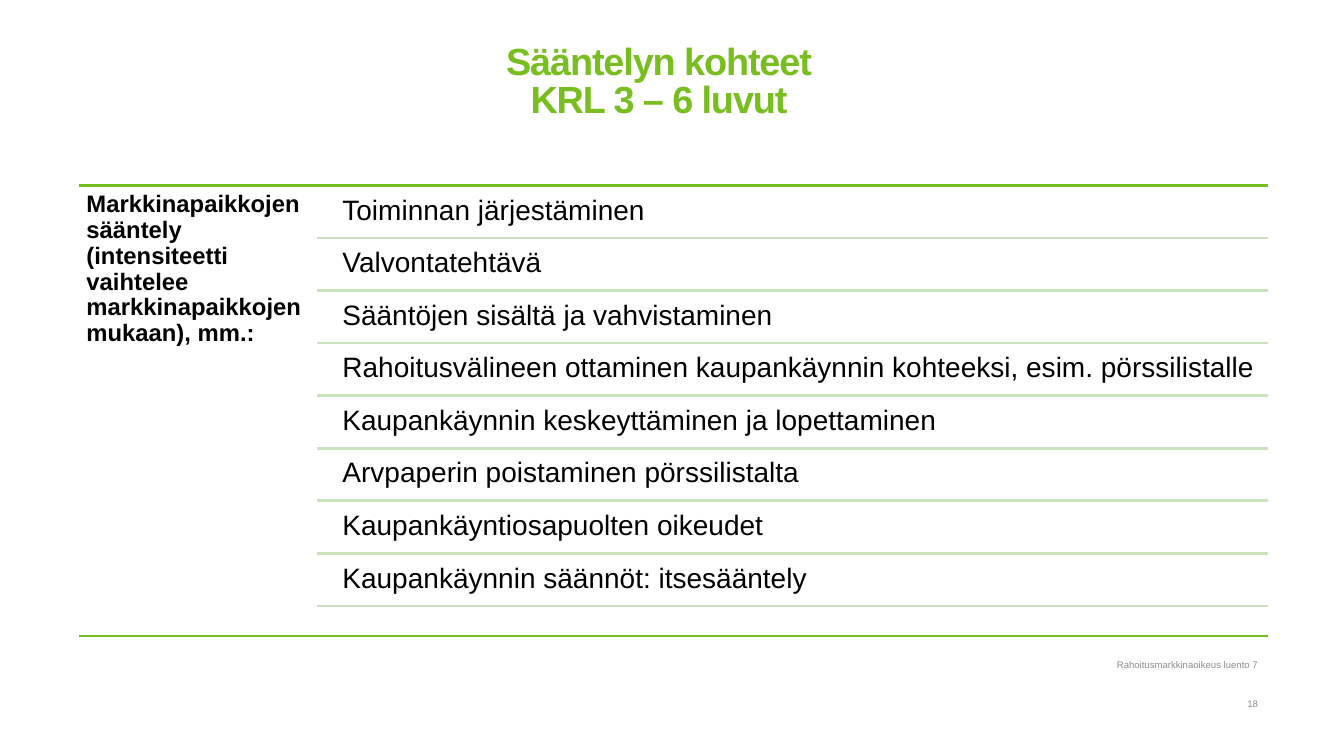
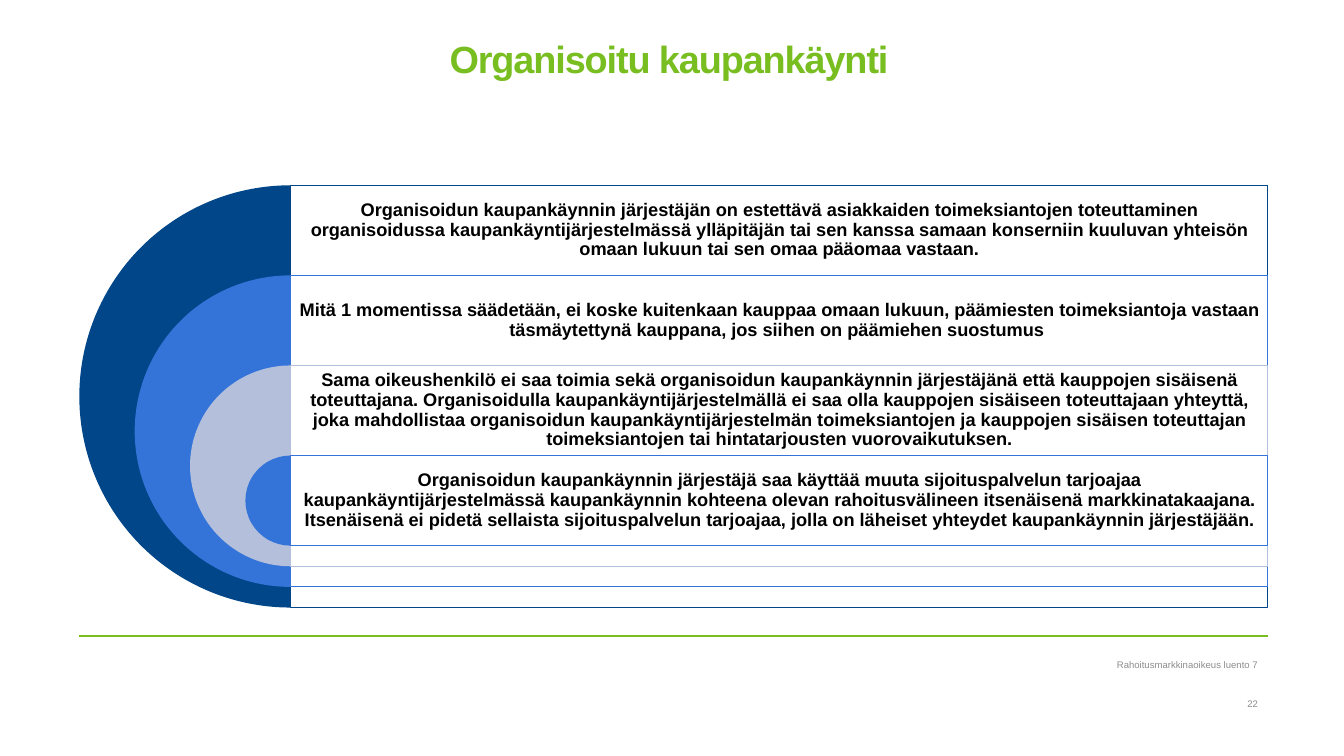
from lxml.etree import SubElement
from pptx import Presentation
from pptx.dml.color import RGBColor
from pptx.enum.shapes import MSO_CONNECTOR, MSO_SHAPE
from pptx.enum.text import MSO_ANCHOR, PP_ALIGN
from pptx.oxml.ns import qn
from pptx.util import Cm, Pt

GREEN, PALE_GREEN = "78BE20", "CAE2BD"
NAVY, BLUE, LAVENDER = "004688", "3474D9", "B4BFDC"
BLACK, GREY, WHITE = "000000", "8C8C8C", "FFFFFF"

LEFT, RIGHT = 2.0, 31.95
BODY_TOP, BODY_HEIGHT = 4.67, 10.64


def color(hex_string):
    return RGBColor.from_string(hex_string)


def set_all(target, values):
    for name, value in values.items():
        setattr(target, name, value)


class Deck:
    """Holds the shared style and the slide being built."""

    FONT = "Arial"
    FOOTER = "Rahoitusmarkkinaoikeus luento 7"

    def __init__(self):
        self.presentation = Presentation()
        set_all(self.presentation, {"slide_width": Cm(33.87), "slide_height": Cm(19.05)})
        self.slide = None

    def start_slide(self, title, number, title_left, title_top):
        self.slide = self.presentation.slides.add_slide(self.presentation.slide_layouts[6])
        self.rule(LEFT, 16.03, GREEN, 1)
        self.text(title, (title_left, title_top, RIGHT - LEFT, 3.33), 27, GREEN, bold=True,
                  align=PP_ALIGN.CENTER, spacing=0.85, tracking=-80)
        for wording, top in ((self.FOOTER, 16.53), (str(number), 17.5)):
            self.text(wording, (18.29, top, 13.41, 0.45), 6.8, GREY, insets=(0.25, 0.13, 0, 0.13),
                      align=PP_ALIGN.RIGHT, anchor=MSO_ANCHOR.MIDDLE)

    def rule(self, left, top, line_color, width):
        """Draw a horizontal line that ends at the right margin."""
        rule = self.slide.shapes.add_connector(
            MSO_CONNECTOR.STRAIGHT, Cm(left), Cm(top), Cm(RIGHT), Cm(top))
        rule.line.color.rgb = color(line_color)
        rule.line.width = Pt(width)
        SubElement(rule._element.spPr, qn("a:effectLst"))

    def text(self, wording, box, size, font_color, bold=False, insets=(0, 0, 0, 0),
             align=PP_ALIGN.LEFT, anchor=MSO_ANCHOR.TOP, spacing=1.0, tracking=None):
        frame = self.slide.shapes.add_textbox(*map(Cm, box)).text_frame
        sides = ("margin_left", "margin_top", "margin_right", "margin_bottom")
        set_all(frame, {"word_wrap": True, "vertical_anchor": anchor,
                        **dict(zip(sides, map(Cm, insets)))})
        paragraph = frame.paragraphs[0]
        paragraph.text = wording
        set_all(paragraph, {"alignment": align, "line_spacing": spacing})
        for run in paragraph.runs:
            set_all(run.font, {"name": self.FONT, "size": Pt(size), "bold": bold})
            run.font.color.rgb = color(font_color)
            if tracking is not None:
                run._r.get_or_add_rPr().set("spc", str(tracking))

    def shape(self, preset, box, fill):
        shape = self.slide.shapes.add_shape(preset, *map(Cm, box))
        shape.shadow.inherit = False
        shape.fill.solid()
        shape.fill.fore_color.rgb = color(fill)
        shape.line.fill.background()
        return shape

    def half_disc(self, box, fill):
        disc = self.shape(MSO_SHAPE.PIE, box, fill)
        disc.adjustments[0], disc.adjustments[1] = 54, 162

    def panel(self, box, outline):
        """Draw a slightly transparent white rectangle with a thin outline."""
        panel = self.shape(MSO_SHAPE.RECTANGLE, box, WHITE)
        panel.line.color.rgb = color(outline)
        panel.line.width = Pt(0.75)
        white = panel._element.spPr.find(qn("a:solidFill")).find(qn("a:srgbClr"))
        SubElement(white, qn("a:alpha")).set("val", "90000")


def build_regulation(deck):
    topics = (
        "Toiminnan järjestäminen",
        "Valvontatehtävä",
        "Sääntöjen sisältä ja vahvistaminen",
        "Rahoitusvälineen ottaminen kaupankäynnin kohteeksi, esim. pörssilistalle",
        "Kaupankäynnin keskeyttäminen ja lopettaminen",
        "Arvpaperin poistaminen pörssilistalta",
        "Kaupankäyntiosapuolten oikeudet",
        "Kaupankäynnin säännöt: itsesääntely",
    )
    heading_width, indent, row_height, gap = 6.0, 0.43, 1.26, 0.065
    topics_left = LEFT + heading_width
    pitch = row_height + gap

    deck.start_slide("Sääntelyn kohteet \vKRL 3 – 6 luvut ", 18, 1.75, 1.12)
    deck.rule(LEFT, BODY_TOP, GREEN, 2)
    deck.text("Markkinapaikkojen sääntely (intensiteetti vaihtelee markkinapaikkojen mukaan), mm.:",
              (LEFT, BODY_TOP, heading_width, BODY_HEIGHT), 17, BLACK, bold=True,
              insets=(0.18,) * 4, spacing=0.9)
    for row, topic in enumerate(topics):
        top = BODY_TOP + row * pitch
        topic_left = topics_left + indent
        deck.text(topic, (topic_left, top + gap, RIGHT - topic_left, row_height), 20, BLACK,
                  insets=(0.2,) * 4, spacing=0.9)
        deck.rule(topics_left, top + pitch, PALE_GREEN, 2)


def build_organised_trading(deck):
    provisions = (
        (NAVY, "Organisoidun kaupankäynnin järjestäjän on estettävä asiakkaiden toimeksiantojen "
               "toteuttaminen organisoidussa kaupankäyntijärjestelmässä ylläpitäjän tai sen kanssa "
               "samaan konserniin kuuluvan yhteisön omaan lukuun tai sen omaa pääomaa vastaan."),
        (BLUE, "Mitä 1 momentissa säädetään, ei koske kuitenkaan kauppaa omaan lukuun, päämiesten "
               "toimeksiantoja vastaan täsmäytettynä kauppana, jos siihen on päämiehen suostumus "),
        (LAVENDER, "Sama oikeushenkilö ei saa toimia sekä organisoidun kaupankäynnin järjestäjänä "
                   "että kauppojen sisäisenä toteuttajana. Organisoidulla kaupankäyntijärjestelmällä "
                   "ei saa olla kauppojen sisäiseen toteuttajaan yhteyttä, joka mahdollistaa "
                   "organisoidun kaupankäyntijärjestelmän toimeksiantojen ja kauppojen sisäisen "
                   "toteuttajan toimeksiantojen tai hintatarjousten vuorovaikutuksen."),
        (BLUE, "Organisoidun kaupankäynnin järjestäjä saa käyttää muuta sijoituspalvelun tarjoajaa "
               "kaupankäyntijärjestelmässä kaupankäynnin kohteena olevan rahoitusvälineen "
               "itsenäisenä markkinatakaajana. Itsenäisenä ei pidetä sellaista sijoituspalvelun "
               "tarjoajaa, jolla on läheiset yhteydet kaupankäynnin järjestäjään."),
    )
    band_height, shrink = 2.27, 2.79
    center = LEFT + BODY_HEIGHT / 2
    panel_width = RIGHT - center

    deck.start_slide("Organisoitu kaupankäynti ", 22, LEFT, 1.07)
    for level, (level_color, provision) in enumerate(provisions):
        top = BODY_TOP + level * band_height
        diameter = BODY_HEIGHT - level * shrink
        deck.half_disc((center - diameter / 2, top, diameter, diameter), level_color)
        deck.panel((center, top, panel_width, diameter), level_color)
        deck.text(provision, (center, top, panel_width, band_height), 13, BLACK, bold=True,
                  insets=(0.13,) * 4, align=PP_ALIGN.CENTER, anchor=MSO_ANCHOR.MIDDLE, spacing=0.9)


def main():
    deck = Deck()
    build_regulation(deck)
    build_organised_trading(deck)
    deck.presentation.save("out.pptx")


if __name__ == "__main__":
    main()
